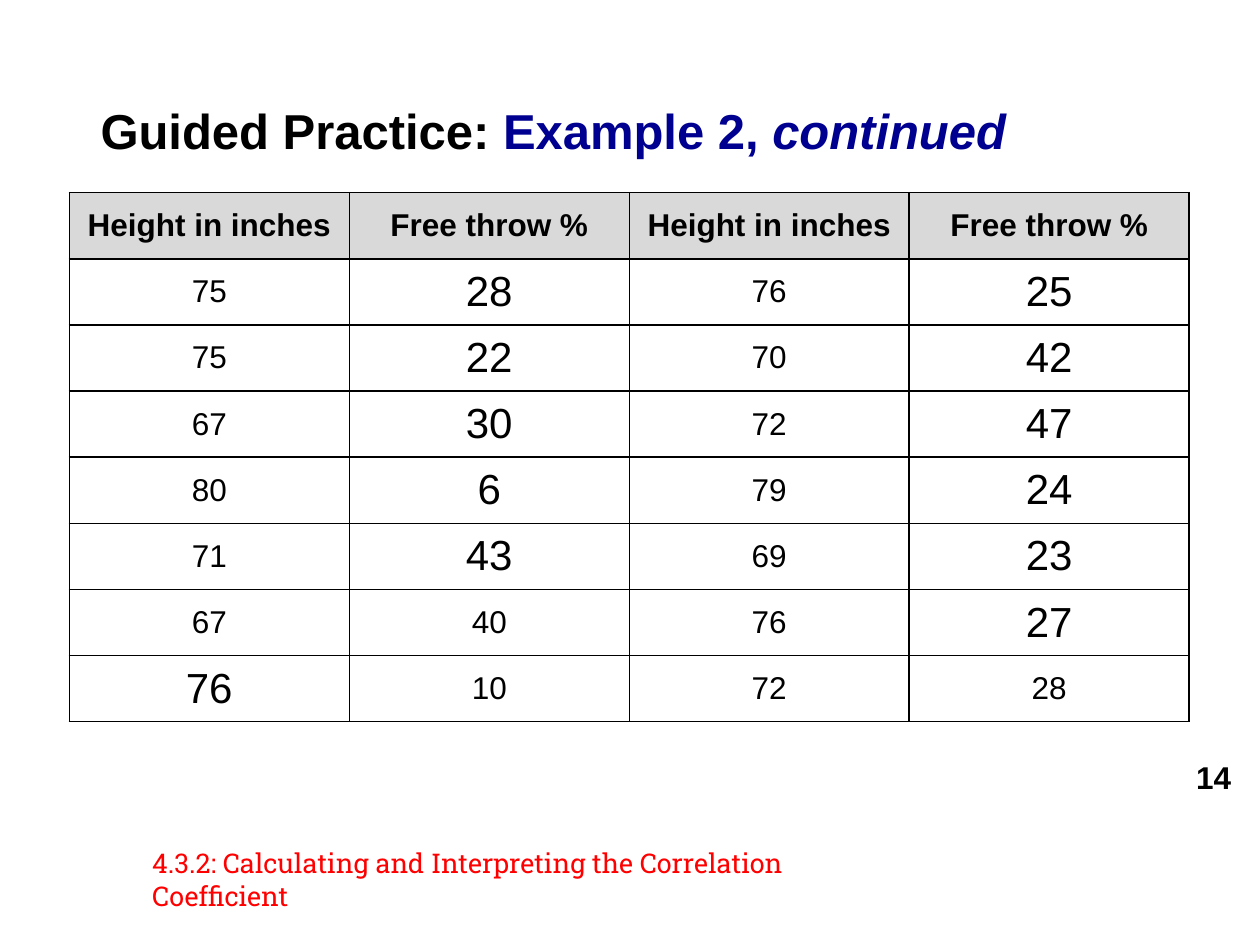
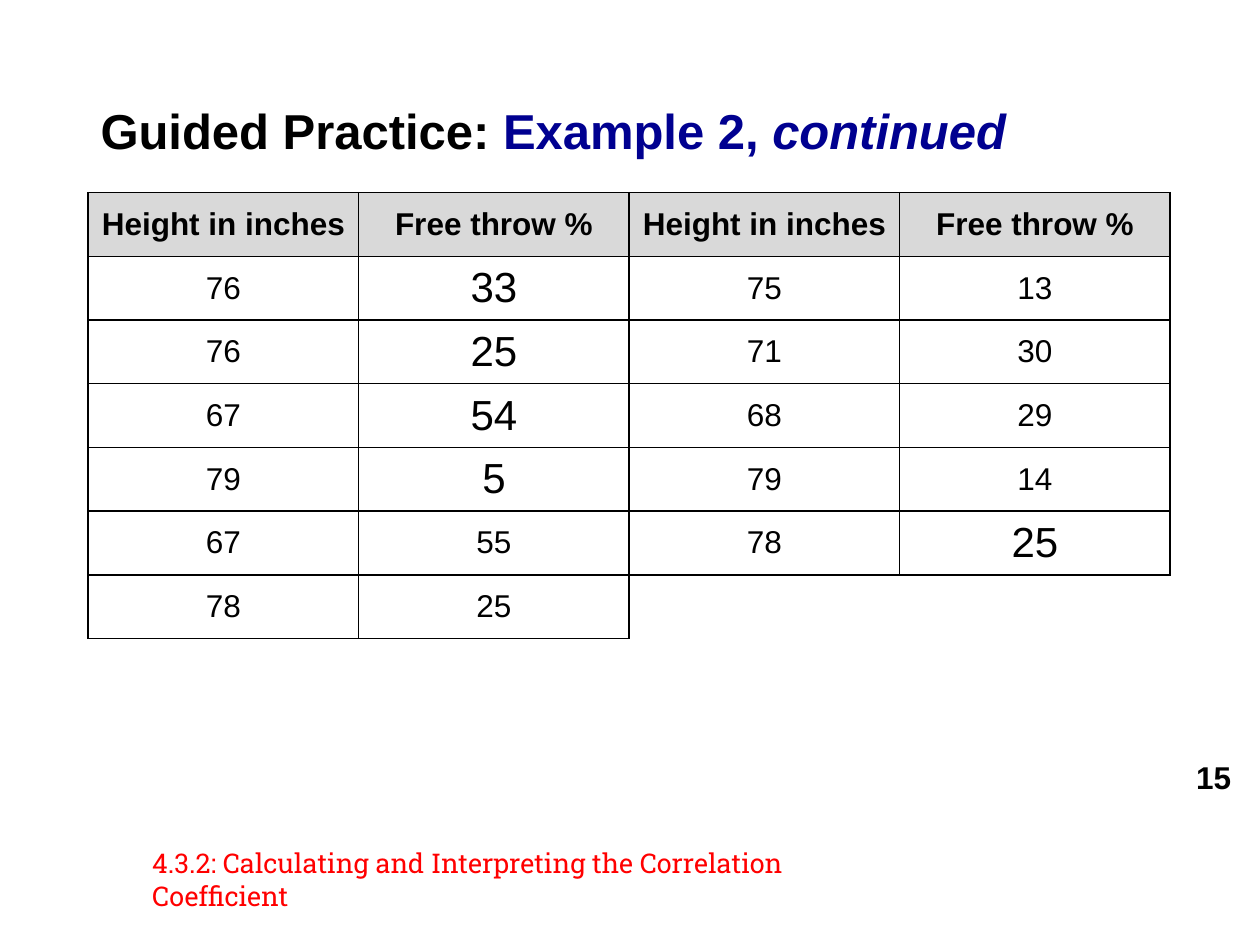
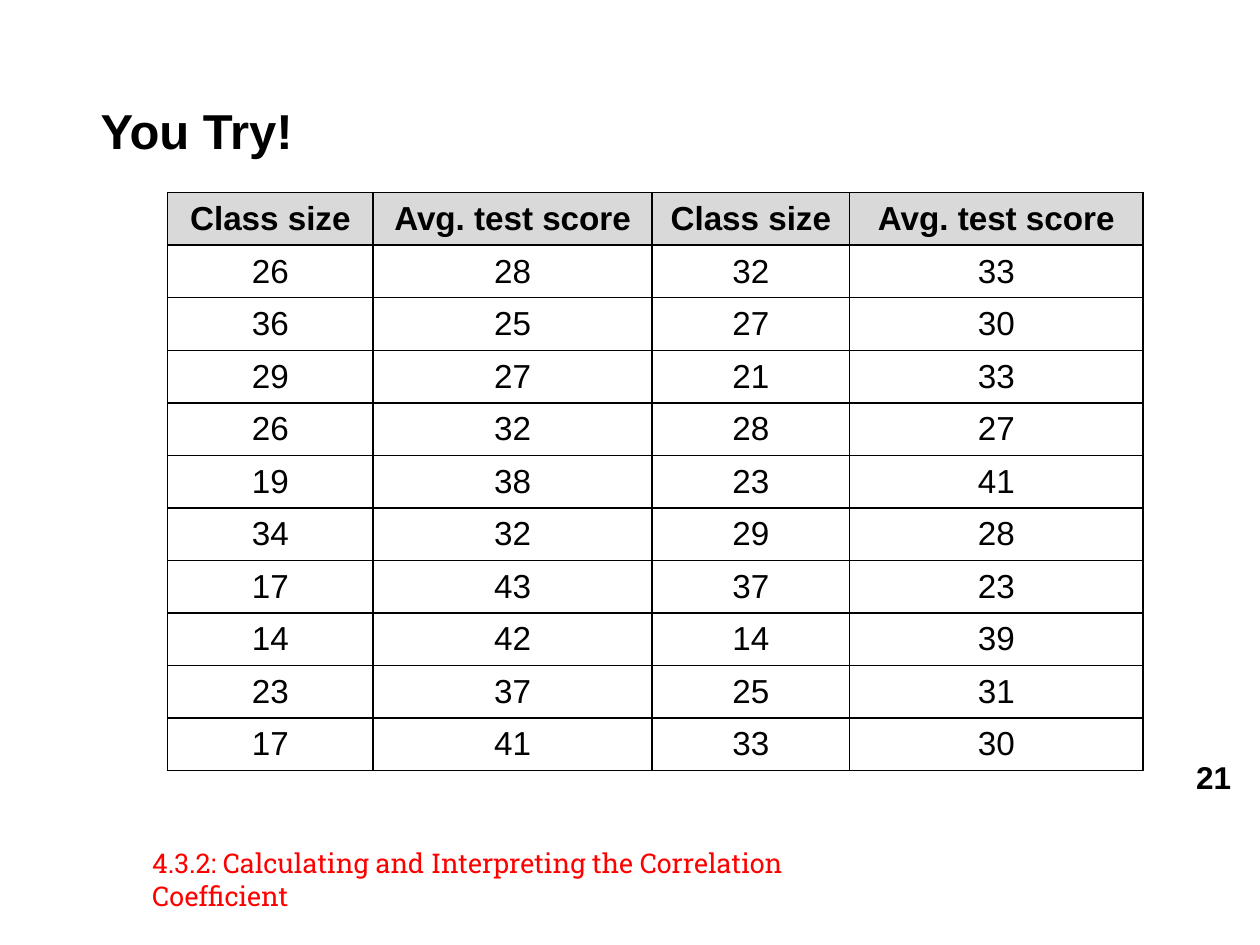
"""Build three slides of paired data tables for a correlation lesson."""
from lxml import etree
from pptx import Presentation
from pptx.dml.color import RGBColor
from pptx.enum.text import MSO_ANCHOR, PP_ALIGN
from pptx.oxml.ns import qn
from pptx.util import Pt

MIDDLE, TOP = MSO_ANCHOR.MIDDLE, MSO_ANCHOR.TOP
LEFT, CENTER, RIGHT = PP_ALIGN.LEFT, PP_ALIGN.CENTER, PP_ALIGN.RIGHT

COLORS = {"text": "000000", "example": "000090", "footer": "FF0000",
          "header": "D9D9D9", "cell": "FFFFFF", "border": "000000"}
FOOTER = "4.3.2: Calculating and Interpreting the Correlation Coefficient"
TITLE_BOX = (50.4, 50.4, 618.5, 393.8)
NUMBER_BOX = (653, 432.7, 57.6, 22.3)
FOOTER_BOX = (79.9, 491.8, 438.5, 20.9)
TABLE_TOP = 110.1
INSET = 7.2
LARGE_SIZE = 24
SIDES = {"lnL": (0, -1), "lnR": (0, 1), "lnT": (-1, 0), "lnB": (1, 0)}

EXAMPLE_TITLE = [("Guided Practice: ", {}),
                 ("Example 2, ", {"color": "example"}),
                 ("continued", {"color": "example", "italic": True})]
THROW_HEADER = ("Height in inches", "Free throw %") * 2
SCORE_HEADER = ("Class size", "Avg. test score") * 2

SLIDES = [
    {"title": EXAMPLE_TITLE, "number": 14, "left": 39.6,
     "columns": [160] * 4, "row_height": 37.8, "size": 18,
     "large": {(row, column) for row in range(1, 6) for column in (1, 3)} | {(6, 3), (7, 0)},
     "rows": [THROW_HEADER,
              (75, 28, 76, 25), (75, 22, 70, 42), (67, 30, 72, 47), (80, 6, 79, 24),
              (71, 43, 69, 23), (67, 40, 76, 27), (76, 10, 72, 28)]},
    {"title": EXAMPLE_TITLE, "number": 15, "left": 50.4,
     "columns": [154.6] * 4, "row_height": 36.4, "size": 18,
     "large": {(row, 1) for row in range(1, 5)} | {(5, 3)},
     "rows": [THROW_HEADER,
              (76, 33, 75, 13), (76, 25, 71, 30), (67, 54, 68, 29), (79, 5, 79, 14),
              (67, 55, 78, 25), (78, 25, "", "")]},
    {"title": [("You Try!", {})], "number": 21, "left": 95.8,
     "columns": [117.4, 159.5, 112.8, 167.7], "row_height": 29.2 + 0.8, "size": 19,
     "large": set(),
     "rows": [SCORE_HEADER,
              (26, 28, 32, 33), (36, 25, 27, 30), (29, 27, 21, 33), (26, 32, 28, 27),
              (19, 38, 23, 41), (34, 32, 29, 28), (17, 43, 37, 23), (14, 42, 14, 39),
              (23, 37, 25, 31), (17, 41, 33, 30)]},
]


def add_text(paragraph, text, size=18, font="Arial", color="text", bold=False,
             italic=False, align=LEFT):
    paragraph.alignment = align
    run = paragraph.add_run()
    run.text = str(text)
    run.font.size = Pt(size)
    run.font.name = font
    run.font.bold = bold
    run.font.italic = italic
    run.font.color.rgb = RGBColor.from_string(COLORS[color])


def add_box(slide, box, anchor=MIDDLE):
    frame = slide.shapes.add_textbox(*map(Pt, box)).text_frame
    frame.word_wrap = True
    frame.vertical_anchor = anchor
    frame.margin_left = frame.margin_right = Pt(INSET)
    frame.margin_top = frame.margin_bottom = Pt(INSET)
    return frame.paragraphs[0]


def has_text(rows, row, column):
    inside = 0 <= row < len(rows) and 0 <= column < len(rows[0])
    return inside and rows[row][column] != ""


def set_borders(cell, rows, row, column):
    properties = cell._tc.get_or_add_tcPr()
    for index, (side, (down, across)) in enumerate(SIDES.items()):
        line = etree.Element(qn(f"a:{side}"), w=str(Pt(1)))
        properties.insert(index, line)
        if has_text(rows, row, column) or has_text(rows, row + down, column + across):
            fill = etree.SubElement(line, qn("a:solidFill"))
            etree.SubElement(fill, qn("a:srgbClr"), val=COLORS["border"])
        else:
            etree.SubElement(line, qn("a:noFill"))


def add_data_table(slide, content):
    rows, widths, height = content["rows"], content["columns"], content["row_height"]
    table = slide.shapes.add_table(
        len(rows), len(widths), Pt(content["left"]), Pt(TABLE_TOP),
        Pt(sum(widths)), Pt(height * len(rows))).table
    table.first_row = table.horz_banding = False
    for column, width in zip(table.columns, widths):
        column.width = Pt(width)
    for row, values in enumerate(rows):
        table.rows[row].height = Pt(height)
        for column, value in enumerate(values):
            cell = table.cell(row, column)
            cell.vertical_anchor = MIDDLE
            cell.fill.solid()
            cell.fill.fore_color.rgb = RGBColor.from_string(
                COLORS["cell" if row else "header"])
            set_borders(cell, rows, row, column)
            if value != "":
                size = LARGE_SIZE if (row, column) in content["large"] else content["size"]
                add_text(cell.text_frame.paragraphs[0], value, size=size,
                         bold=row == 0, align=CENTER)


def main():
    presentation = Presentation()
    presentation.slide_width, presentation.slide_height = Pt(720), Pt(540)
    for content in SLIDES:
        slide = presentation.slides.add_slide(presentation.slide_layouts[6])
        title = add_box(slide, TITLE_BOX, anchor=TOP)
        for text, style in content["title"]:
            add_text(title, text, size=28, bold=True, **style)
        add_text(add_box(slide, NUMBER_BOX), content["number"], bold=True, align=RIGHT)
        add_text(add_box(slide, FOOTER_BOX), FOOTER, size=15.5, font="Roboto Slab",
                 color="footer")
        add_data_table(slide, content)
    presentation.save("out.pptx")


if __name__ == "__main__":
    main()
